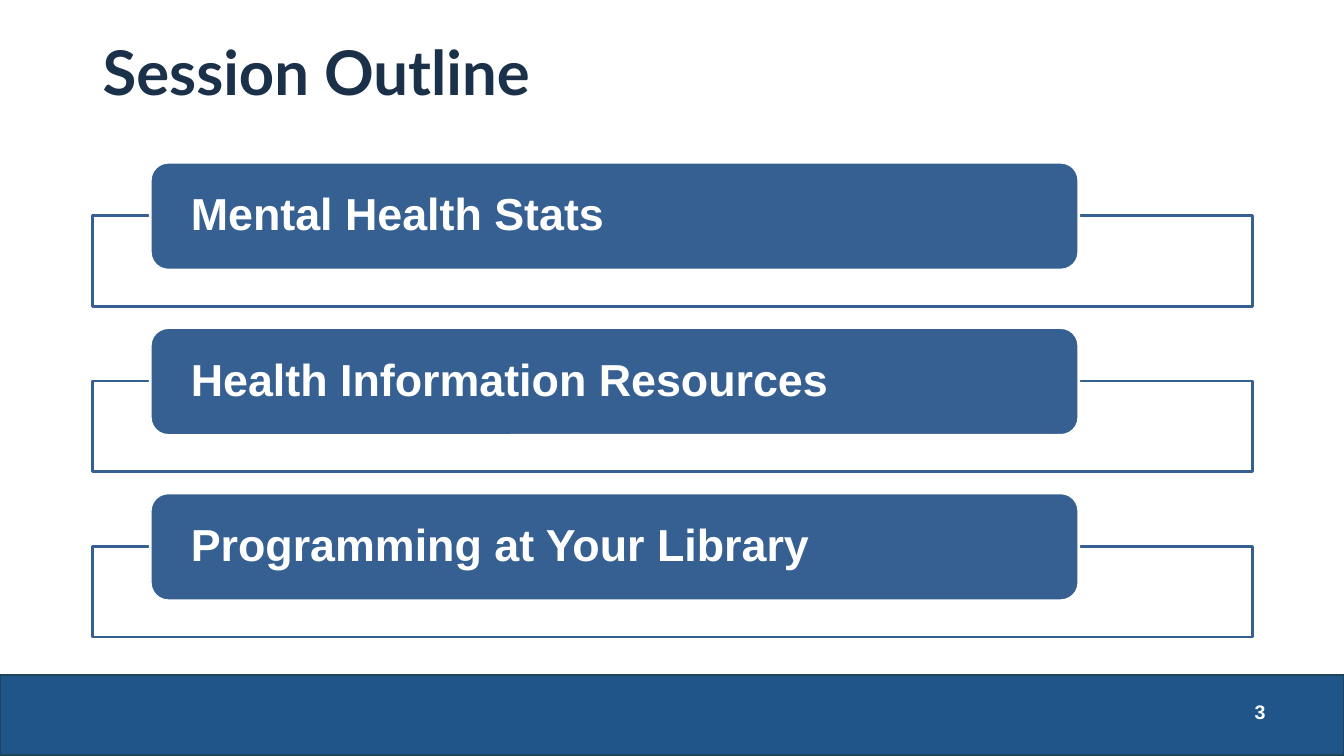
from pptx import Presentation
from pptx import util as u
from pptx.dml.color import RGBColor
from pptx.enum import shapes, text

PX = 9144
WIDTH, HEIGHT = 1333, 750
WHITE = RGBColor(0xFF, 0xFF, 0xFF)
NAVY = RGBColor(0x1B, 0x30, 0x49)
BLUE = RGBColor(0x36, 0x60, 0x92)
FOOTER_FILL = RGBColor(0x20, 0x55, 0x8A)
FOOTER_LINE = RGBColor(0x20, 0x45, 0x5A)
TOPICS = [
    "Mental Health Stats",
    "Health Information Resources",
    "Programming at Your Library",
]


def emu(*lengths):
    return [u.Emu(length * PX) for length in lengths]


def set_text(sp, words, size, font="Arial", color=WHITE, align=text.PP_ALIGN.LEFT,
             spacing=0.9, inset=(10, 5)):
    tf = sp.text_frame
    tf.word_wrap = True
    tf.vertical_anchor = text.MSO_ANCHOR.MIDDLE
    tf.margin_left = tf.margin_right = u.Emu(inset[0] * PX)
    tf.margin_top = tf.margin_bottom = u.Emu(inset[1] * PX)
    p = tf.paragraphs[0]
    p.alignment = align
    p.line_spacing = spacing
    r = p.add_run()
    r.text = words
    r.font.name = font
    r.font.size = u.Pt(size)
    r.font.bold = True
    r.font.color.rgb = color


def add_box(s, kind, box, fill, line, weight):
    sp = s.shapes.add_shape(kind, *emu(*box))
    sp.shadow.inherit = False
    sp.fill.solid()
    sp.fill.fore_color.rgb = fill
    sp.line.color.rgb = line
    sp.line.width = u.Pt(weight)
    return sp


def add_title(s, box, words):
    set_text(s.shapes.add_textbox(*emu(*box)), words, 44, font="Lato", color=NAVY)


def add_topic(s, box, words):
    x, y, w, h = box
    add_box(s, shapes.MSO_SHAPE.RECTANGLE, (x, y + 53, w, h - 53), WHITE, BLUE, 2)
    label = add_box(s, shapes.MSO_SHAPE.ROUNDED_RECTANGLE,
                    (x + 57, y, w * 4 // 5 + 1, 107), BLUE, WHITE, 2)
    set_text(label, words, 32, inset=(35, 5))


def add_outline(s, box, topics, pitch):
    x, y, w, h = box
    row_height = h - pitch * (len(topics) - 1)
    for i, topic in enumerate(topics):
        add_topic(s, (x, y + i * pitch, w, row_height), topic)


def add_footer(s, box, number):
    x, y, w, h = box
    add_box(s, shapes.MSO_SHAPE.RECTANGLE, box, FOOTER_FILL, FOOTER_LINE, 1.5)
    sp = s.shapes.add_textbox(*emu(x + w - 255, y + 16, 187, 40))
    set_text(sp, number, 14, align=text.PP_ALIGN.RIGHT, spacing=1.0)


def main():
    prs = Presentation()
    prs.slide_width, prs.slide_height = emu(WIDTH, HEIGHT)
    s = prs.slides.add_slide(prs.slide_layouts[6])
    add_footer(s, (0, 670, WIDTH, 79), "3")
    add_title(s, (92, 2, 1150, 145), "Session Outline")
    add_outline(s, (92, 161, 1150, 471), TOPICS, pitch=164)
    prs.save("out.pptx")


if __name__ == "__main__":
    main()
